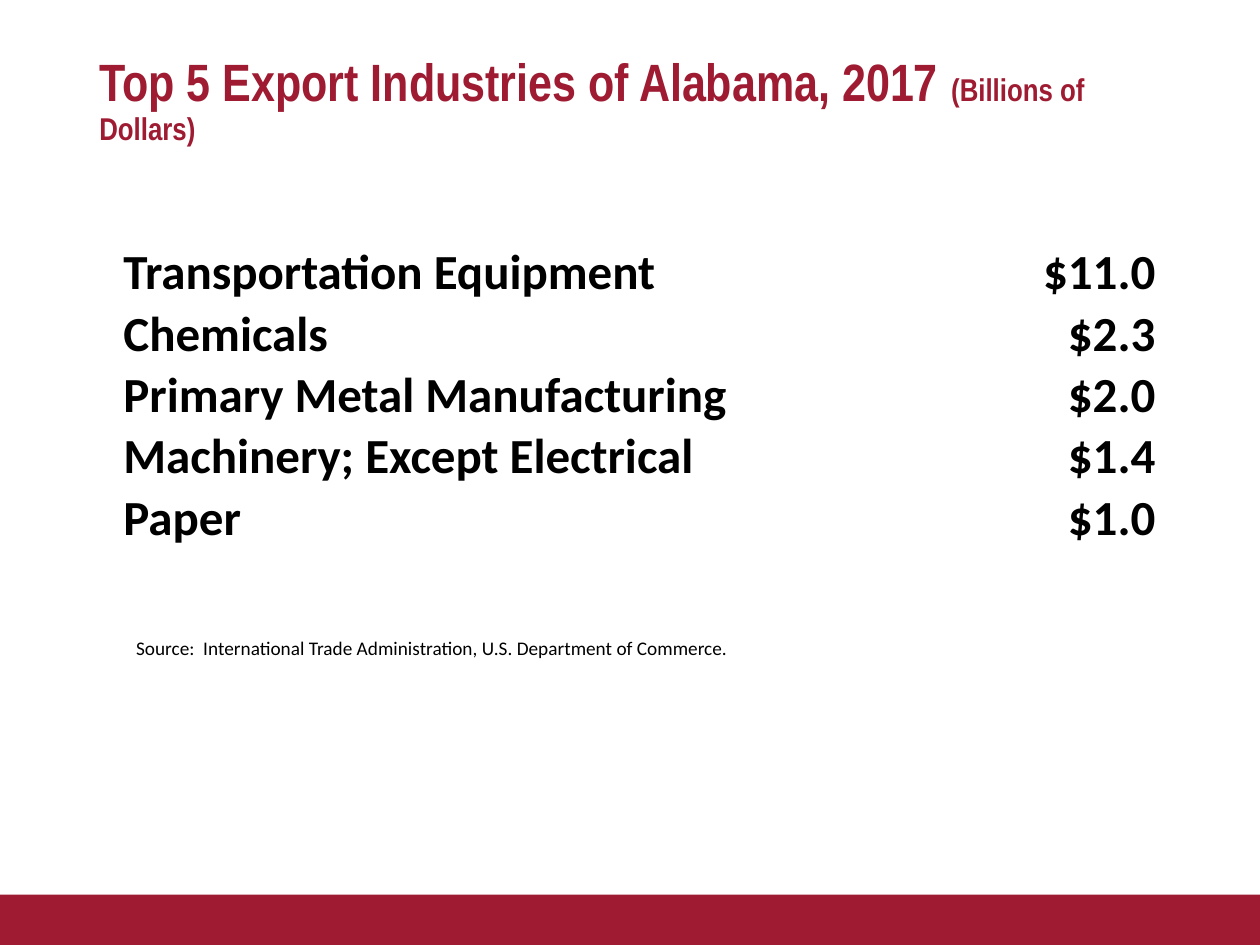
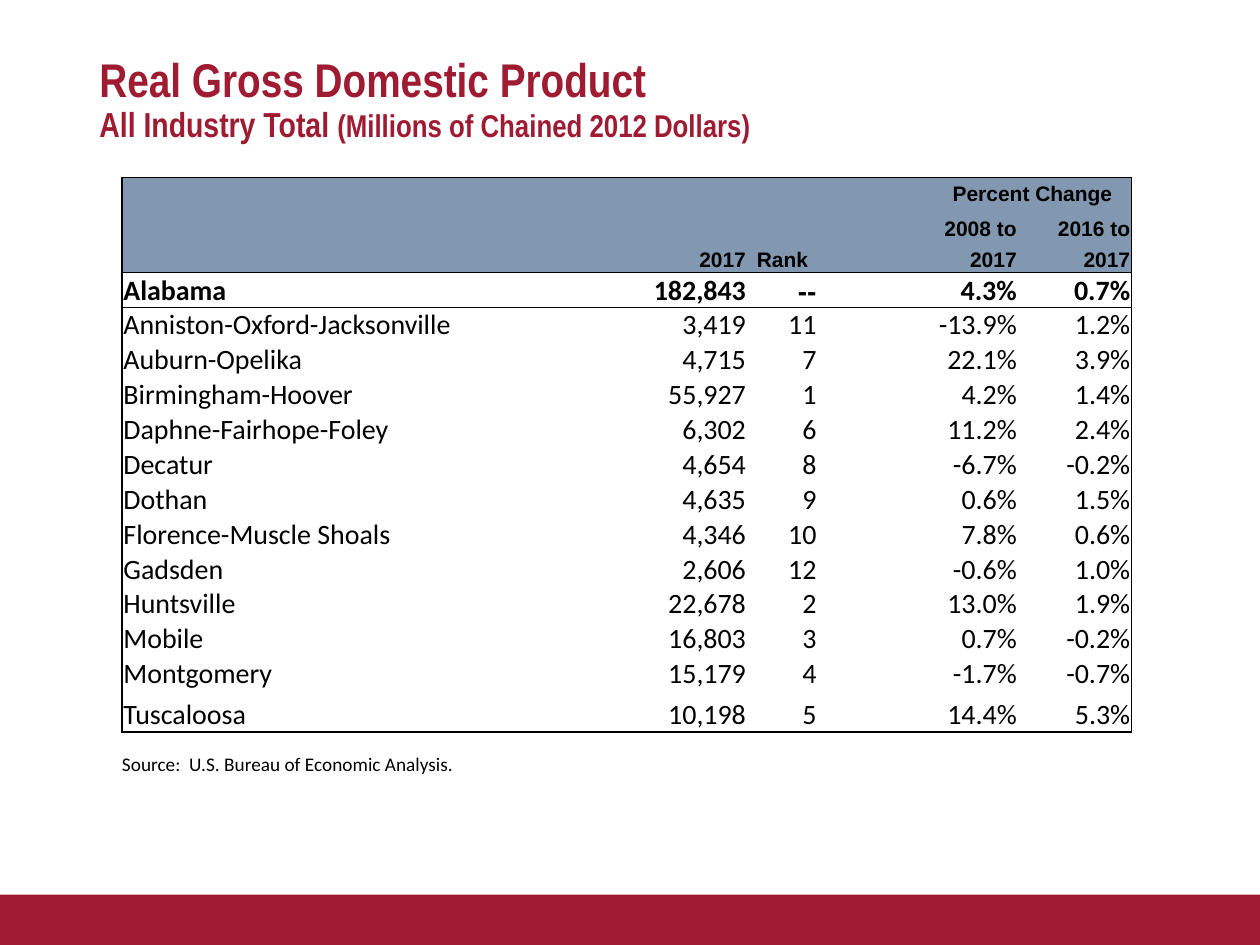
from dataclasses import dataclass

from lxml.etree import SubElement
from pptx import Presentation
from pptx.dml.color import RGBColor
from pptx.enum.shapes import MSO_SHAPE
from pptx.enum.text import MSO_ANCHOR, PP_ALIGN
from pptx.oxml.ns import qn
from pptx.util import Inches, Pt

PLAIN_GRID = "{2D5ABB26-0587-4C30-8999-92F81FD0307C}"
LEFT, MID, RIGHT = PP_ALIGN.LEFT, PP_ALIGN.CENTER, PP_ALIGN.RIGHT


@dataclass(frozen=True)
class Theme:
    crimson: str = "9E1B32"
    steel: str = "8298B0"
    black: str = "000000"
    title_font: str = "Arial Narrow"
    head_font: str = "Arial"
    body_font: str = "Calibri"
    big: float = 28
    body: float = 16
    head: float = 12
    note: float = 11


class Deck:
    def __init__(self, theme):
        self.theme = theme
        self.file = Presentation()
        self.file.slide_width = Inches(10)
        self.file.slide_height = Inches(7.5)
        self.slide = None

    def start(self, parts):
        """Add a slide with its footer band and title."""
        self.slide = self.file.slides.add_slide(self.file.slide_layouts[6])
        self.band()
        self.title(parts)

    def band(self):
        band = self.slide.shapes.add_shape(
            MSO_SHAPE.RECTANGLE, 0, Inches(7.1), Inches(10), Inches(0.4))
        band.shadow.inherit = False
        band.fill.solid()
        band.fill.fore_color.rgb = RGBColor.from_string(self.theme.crimson)
        band.line.fill.background()

    def style(self, run, size, bold=False, font=None, color=None):
        run.font.size = Pt(size)
        run.font.bold = bold
        run.font.name = font or self.theme.body_font
        run.font.color.rgb = RGBColor.from_string(color or self.theme.black)

    def box(self, left, top, width, height):
        box = self.slide.shapes.add_textbox(
            Inches(left), Inches(top), Inches(width), Inches(height))
        box.text_frame.word_wrap = True
        return box.text_frame

    def title(self, parts):
        """Write (text, size) parts; a text ending in a newline breaks the line."""
        para = self.box(0.69, 0.4, 8.62, 0.65).paragraphs[0]
        para.line_spacing = 0.9
        for text, size in parts:
            run = para.add_run()
            run.text = text.rstrip("\n")
            self.style(run, size, True, self.theme.title_font, self.theme.crimson)
            if text.endswith("\n"):
                para.add_line_break()

    def note(self, text, left, top, width, height):
        frame = self.box(left, top, width, height)
        frame.text = text
        self.style(frame.paragraphs[0].runs[0], self.theme.note)

    def table(self, left, top, height, cols, rows):
        """Add a bare table with the given column widths and row heights."""
        frame = self.slide.shapes.add_table(
            len(rows), len(cols), Inches(left), Inches(top),
            Inches(sum(cols)), Inches(height))
        table = frame.table
        table.first_row = table.horz_banding = False
        table._tbl.tblPr.find(qn("a:tableStyleId")).text = PLAIN_GRID
        for col, width in zip(table.columns, cols):
            col.width = Inches(width)
        for row, tall in zip(table.rows, rows):
            row.height = Inches(tall)
        frame.height = Inches(height)
        return table

    def cell(self, cell, text, size, bold=False, font=None, align=LEFT,
             anchor=MSO_ANCHOR.BOTTOM, pad=(0.01, 0.01, 0.01, 0), fill=None):
        cell.margin_left, cell.margin_top, cell.margin_right, cell.margin_bottom = map(
            Inches, pad)
        cell.vertical_anchor = anchor
        if fill:
            cell.fill.solid()
            cell.fill.fore_color.rgb = RGBColor.from_string(fill)
        else:
            cell.fill.background()
        para = cell.text_frame.paragraphs[0]
        para.text = text
        para.alignment = align
        for run in para.runs:
            self.style(run, size, bold, font)
        if not text:
            para._p.get_or_add_endParaRPr().set("sz", str(size * 100))

    def edge(self, cell, sides):
        """Draw cell borders from a dict of side letter to width in points."""
        props = cell._tc.get_or_add_tcPr()
        drawn = [side for side in "LRTB" if side in sides]
        for spot, side in enumerate(drawn):
            line = SubElement(props, qn(f"a:ln{side}"), w=str(Pt(sides[side])))
            fill = SubElement(line, qn("a:solidFill"))
            SubElement(fill, qn("a:srgbClr"), val=self.theme.black)
            props.insert(spot, line)


EXPORTS = [
    ("Transportation Equipment", "$11.0"),
    ("Chemicals", "$2.3"),
    ("Primary Metal Manufacturing", "$2.0"),
    ("Machinery; Except Electrical", "$1.4"),
    ("Paper", "$1.0"),
    ("", ""),
]
HEADS = [
    ("", "", "", "Percent Change", ""),
    ("", "", "", "2008 to", "2016 to"),
    ("", "2017", "Rank", "2017", "2017"),
]
METROS = [
    ("Alabama", "182,843", "--", "4.3%", "0.7%"),
    ("Anniston-Oxford-Jacksonville", "3,419", "11", "-13.9%", "1.2%"),
    ("Auburn-Opelika", "4,715", "7", "22.1%", "3.9%"),
    ("Birmingham-Hoover", "55,927", "1", "4.2%", "1.4%"),
    ("Daphne-Fairhope-Foley", "6,302", "6", "11.2%", "2.4%"),
    ("Decatur", "4,654", "8", "-6.7%", "-0.2%"),
    ("Dothan", "4,635", "9", "0.6%", "1.5%"),
    ("Florence-Muscle Shoals", "4,346", "10", "7.8%", "0.6%"),
    ("Gadsden", "2,606", "12", "-0.6%", "1.0%"),
    ("Huntsville", "22,678", "2", "13.0%", "1.9%"),
    ("Mobile", "16,803", "3", "0.7%", "-0.2%"),
    ("Montgomery", "15,179", "4", "-1.7%", "-0.7%"),
    ("Tuscaloosa", "10,198", "5", "14.4%", "5.3%"),
]


def exports(deck):
    theme = deck.theme
    deck.start([("Top 5 Export Industries of Alabama, 2017 ", 30),
                ("(Billions of Dollars)", 18)])
    table = deck.table(0.96, 1.91, 3.39, [6.54, 1.69], [0.35] * 6 + [0.61])
    pad = (0.02, 0.02, 0.02, 0)
    for r, (name, value) in enumerate(EXPORTS):
        size = theme.big if name else theme.head
        deck.cell(table.cell(r, 0), name, size, True,
                  anchor=MSO_ANCHOR.MIDDLE, pad=pad)
        deck.cell(table.cell(r, 1), value, size, True, align=RIGHT, pad=pad)

    # Source row across both columns
    last = len(EXPORTS)
    table.cell(last, 0).merge(table.cell(last, 1))
    deck.cell(table.cell(last, 0),
              "Source:  International Trade Administration, U.S. Department of Commerce.",
              theme.note, pad=(0.12, 0.06, 0.12, 0.06))


def product(deck):
    theme = deck.theme
    deck.start([("Real Gross Domestic Product \n", 27), ("All Industry Total ", 19.8),
                ("(Millions of Chained 2012 Dollars)", 18)])
    rows = HEADS + METROS
    top, last = len(HEADS), len(rows) - 1
    table = deck.table(0.97, 1.41, 4.44, [4.2, 0.76, 0.56, 1.59, 0.9],
                       [0.25] * last + [0.33])
    table.cell(0, 3).merge(table.cell(0, 4))
    for r, row in enumerate(rows):
        head = r < top
        for c, text in enumerate(row):
            cell = table.cell(r, c)
            plain = head or text == "--"
            deck.cell(cell, text, theme.head if head else theme.body, r <= top,
                      theme.head_font if plain else theme.body_font,
                      RIGHT if c else LEFT, fill=theme.steel if head else None)

            # Outer frame and the rule under the heads
            sides = {}
            if c == 0:
                sides["L"] = 1
            if c == len(row) - 1 or (r, c) == (0, 3):
                sides["R"] = 0.5 if r < top - 1 else 1
            if r in (0, top):
                sides["T"] = 0.5
            if r in (top - 1, last):
                sides["B"] = 1 if r == last else 0.5
            deck.edge(cell, sides)

    # Centred heads
    span = table.cell(0, 3)
    span.vertical_anchor = MSO_ANCHOR.MIDDLE
    para = span.text_frame.paragraphs[0]
    para.alignment = MID
    para._p.get_or_add_pPr().set("marL", str(Inches(0.92)))
    table.cell(2, 2).text_frame.paragraphs[0].alignment = MID

    deck.note("Source:  U.S. Bureau of Economic Analysis.", 0.87, 5.92, 4.57, 0.59)


def main():
    deck = Deck(Theme())
    exports(deck)
    product(deck)
    deck.file.save("out.pptx")


if __name__ == "__main__":
    main()
